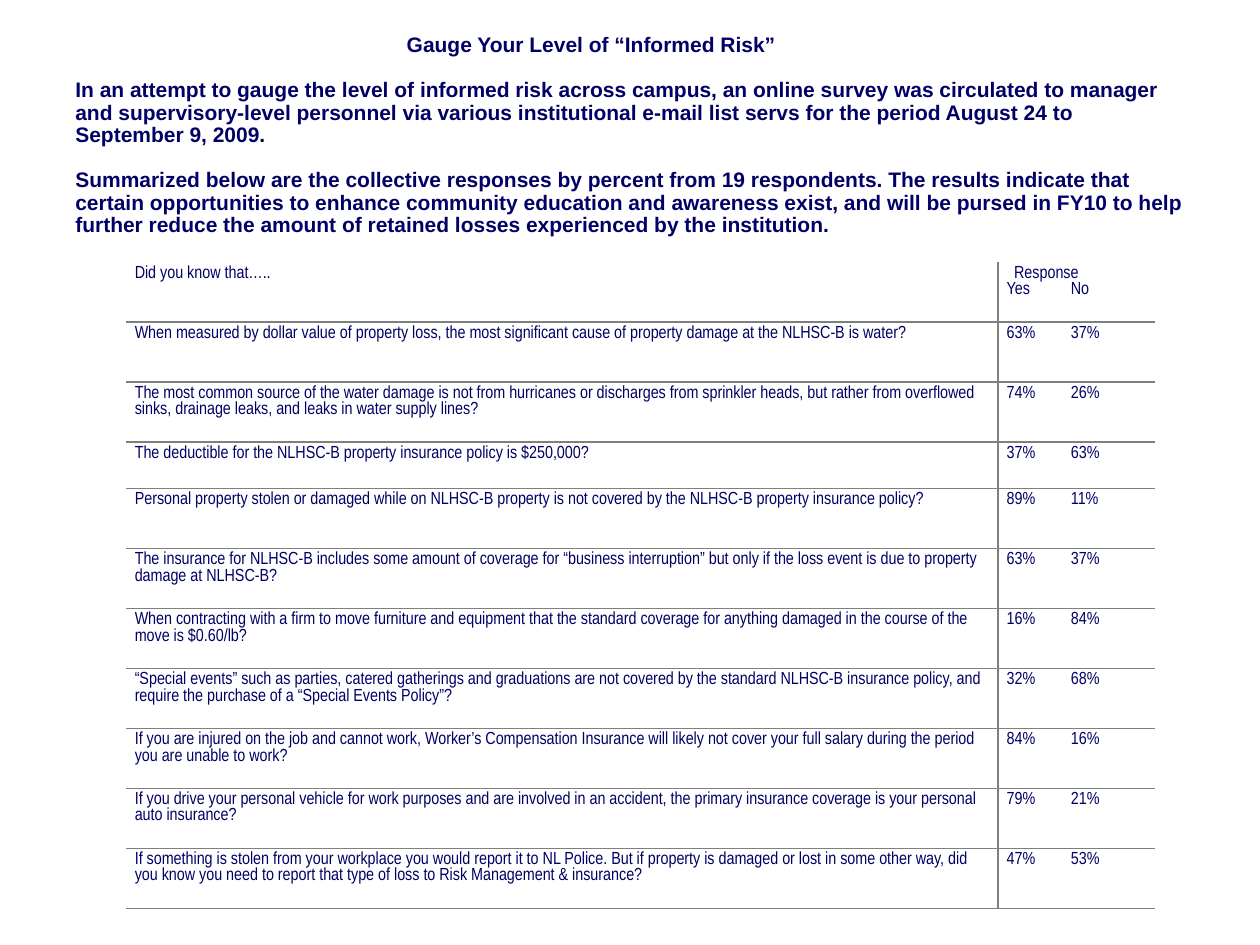
from dataclasses import dataclass

from lxml import etree
from pptx import Presentation
from pptx.dml.color import RGBColor
from pptx.enum.text import MSO_ANCHOR
from pptx.oxml.ns import qn
from pptx.util import Inches, Pt

TOP = MSO_ANCHOR.TOP
NO_STYLE = "{2D5ABB26-0587-4C30-8999-92F81FD0307C}"
BLANK_LAYOUT = 6


@dataclass(frozen=True)
class Theme:
    """Hold the colours, fonts and type sizes of the slide."""

    ink: RGBColor = RGBColor(0x00, 0x00, 0x66)
    rule: str = "7F7F7F"
    rule_width: int = Pt(1)
    heading_font: str = "Arial"
    heading_size: int = Pt(12)
    heading_pitch: int = Pt(12.9)
    table_font: str = "Arial Narrow"
    table_size: int = Pt(10)
    table_spacing: float = 1.0


@dataclass(frozen=True)
class Box:
    """Describe a region of the slide in inches."""

    left: float
    top: float
    width: float
    height: float

    def lengths(self):
        """Return the region as slide lengths."""
        return [Inches(n) for n in (self.left, self.top, self.width, self.height)]


THEME = Theme()
INTRODUCTION = (
    "Gauge Your Level of “Informed Risk”",
    "In an attempt to gauge the level of informed risk across campus, an online survey was circulated to manager and supervisory-level personnel via various institutional e-mail list servs for the period August 24 to September 9, 2009.",
    "Summarized below are the collective responses by percent from 19 respondents. The results indicate that certain opportunities to enhance community education and awareness exist, and will be pursed in FY10 to help further reduce the amount of retained losses experienced by the institution.",
)
RESPONSES = (
    ("When measured by dollar value of property loss, the most significant cause of property damage at the NLHSC-B is water?", 63, 37),
    ("The most common source of the water damage is not from hurricanes or discharges from sprinkler heads, but rather from overflowed sinks, drainage leaks, and leaks in water supply lines?", 74, 26),
    ("The deductible for the NLHSC-B property insurance policy is $250,000?", 37, 63),
    ("Personal property stolen or damaged while on NLHSC-B property is not covered by the NLHSC-B property insurance policy?", 89, 11),
    ("The insurance for NLHSC-B includes some amount of coverage for “business interruption” but only if the loss event is due to property damage at NLHSC-B?", 63, 37),
    ("When contracting with a firm to move furniture and equipment that the standard coverage for anything damaged in the course of the move is $0.60/lb?", 16, 84),
    ("“Special events” such as parties, catered gatherings and graduations are not covered by the standard NLHSC-B insurance policy, and require the purchase of a “Special Events Policy”?", 32, 68),
    ("If you are injured on the job and cannot work, Worker’s Compensation Insurance will likely not cover your full salary during the period you are unable to work?", 84, 16),
    ("If you drive your personal vehicle for work purposes and are involved in an accident, the primary insurance coverage is your personal auto insurance?", 79, 21),
    ("If something is stolen from your workplace you would report it to NL Police. But if property is damaged or lost in some other way, did you know you need to report that type of loss to Risk Management & insurance?", 47, 53),
)
SHORT_ROW = 3
SHORT_ROW_HEIGHT = 0.37
RESPONSE_WIDTH = 1.25
NO_TAB = Inches(0.51)


def format_runs(paragraph, font, size, bold=False):
    """Give every run of a paragraph its font, size and colour."""
    for run in paragraph.runs:
        run.font.name = font
        run.font.size = size
        run.font.bold = bold
        run.font.color.rgb = THEME.ink


def indent_paragraph(paragraph, length):
    """Set the left margin of a paragraph."""
    properties = paragraph._p.get_or_add_pPr()
    properties.set("marL", str(length))
    properties.set("indent", "0")


def add_tab_stop(paragraph, position):
    """Add one left-aligned tab stop to a paragraph."""
    stops = etree.SubElement(paragraph._p.get_or_add_pPr(), qn("a:tabLst"))
    etree.SubElement(stops, qn("a:tab"), pos=str(position), algn="l")


def add_borders(cell, sides):
    """Draw rules on the named sides of a cell."""
    properties = cell._tc.get_or_add_tcPr()
    for index, side in enumerate(sides):
        line = etree.Element(qn(f"a:ln{side}"), w=str(THEME.rule_width))
        fill = etree.SubElement(line, qn("a:solidFill"))
        etree.SubElement(fill, qn("a:srgbClr"), val=THEME.rule)
        properties.insert(index, line)


def add_introduction(slide, box):
    """Place the heading and its two explanatory paragraphs."""
    frame = slide.shapes.add_textbox(*box.lengths()).text_frame
    frame.word_wrap = True
    frame.vertical_anchor = TOP
    frame.margin_top = frame.margin_bottom = 0
    frame.text = "\n".join(INTRODUCTION)
    for paragraph in frame.paragraphs:
        paragraph.line_spacing = THEME.heading_pitch
        format_runs(paragraph, THEME.heading_font, THEME.heading_size, True)
    for paragraph in frame.paragraphs[1:]:
        paragraph.space_before = THEME.heading_pitch
    indent_paragraph(frame.paragraphs[0], Inches(2.63))


def fill_cell(cell, text, sides):
    """Write and format one cell of the survey table."""
    cell.text = text
    cell.fill.background()
    cell.vertical_anchor = TOP
    cell.margin_left = cell.margin_right = Inches(0.07)
    cell.margin_top = Inches(0.03)
    cell.margin_bottom = 0
    for paragraph in cell.text_frame.paragraphs:
        paragraph.line_spacing = THEME.table_spacing
        format_runs(paragraph, THEME.table_font, THEME.table_size)
        if "\t" in paragraph.text:
            add_tab_stop(paragraph, NO_TAB)
    add_borders(cell, sides)


def add_survey_table(slide, box):
    """Place the questions with their yes and no percentages."""
    rows = [("Did you know that…..", "Response\nYes\tNo")]
    rows += [(question, f"{yes}%\t{no}%") for question, yes, no in RESPONSES]
    table = slide.shapes.add_table(len(rows), 2, *box.lengths()).table
    table.first_row = table.horz_banding = False
    table._tbl.tblPr.find(qn("a:tableStyleId")).text = NO_STYLE
    widths = (box.width - RESPONSE_WIDTH, RESPONSE_WIDTH)
    for column, width in zip(table.columns, widths):
        column.width = Inches(width)
    row_height = (box.height - SHORT_ROW_HEIGHT) / (len(rows) - 1)
    for index, (question, response) in enumerate(rows):
        height = SHORT_ROW_HEIGHT if index == SHORT_ROW else row_height
        table.rows[index].height = Inches(height)
        fill_cell(table.cell(index, 0), question, "RB")
        fill_cell(table.cell(index, 1), response, "B")
    indent_paragraph(table.cell(0, 1).text_frame.paragraphs[0], Inches(0.06))


def main():
    """Build and save the survey slide."""
    presentation = Presentation()
    presentation.slide_width = Inches(10)
    presentation.slide_height = Inches(7.5)
    slide = presentation.slides.add_slide(presentation.slide_layouts[BLANK_LAYOUT])
    add_survey_table(slide, Box(1, 2.08, 8.17, 5.13))
    add_introduction(slide, Box(0.5, 0.27, 9, 1.75))
    presentation.save("out.pptx")


if __name__ == "__main__":
    main()
